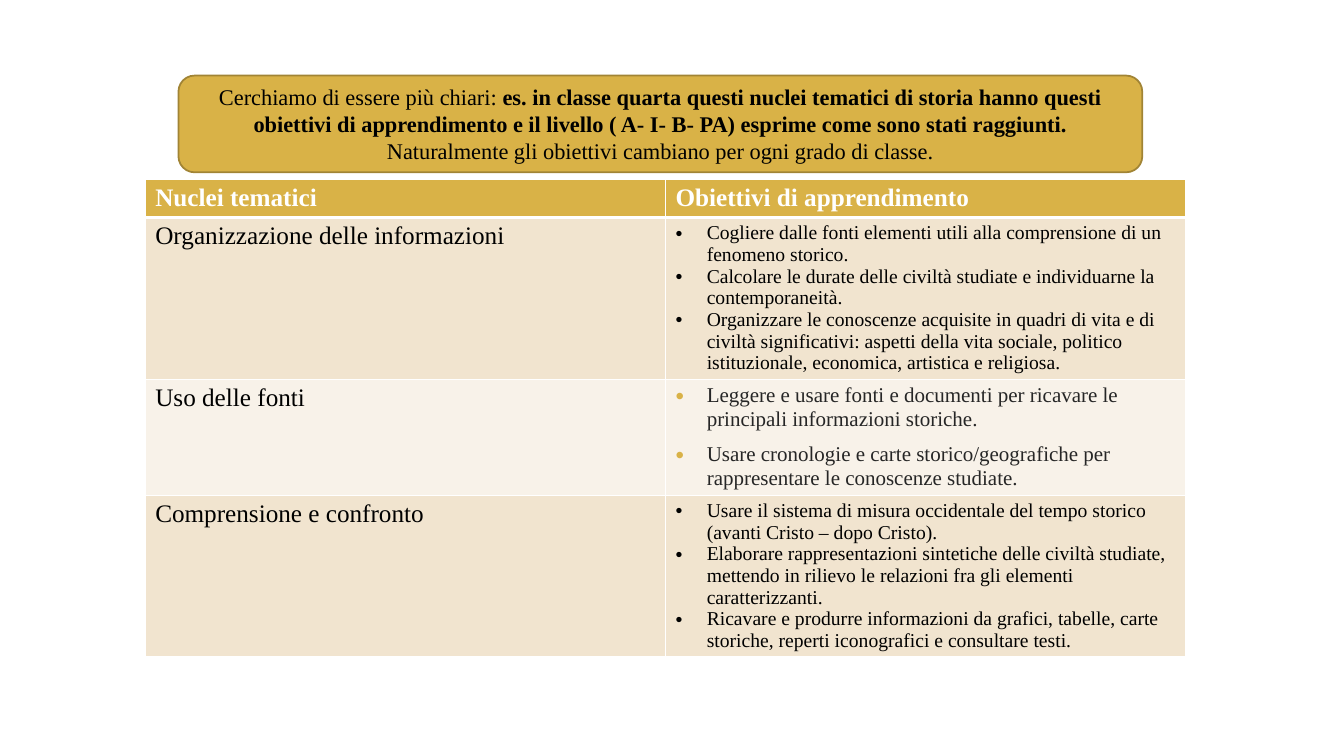
"""Build a slide with a table of history topics and their learning objectives."""
from lxml import etree
from pptx import Presentation
from pptx import util as u
from pptx.dml.color import RGBColor
from pptx.enum import shapes, text
from pptx.oxml.ns import qn

FONT = "Times New Roman"
COLORS = {
    "gold": "D9B247", "outline": "A18435", "sand": "F1E4CF", "cream": "F8F2E9",
    "white": "FFFFFF", "black": "000000", "gray": "262626",
}
BULLET_INDENT = u.Inches(0.31)


def add_text(paragraph, content, size=18, color="black", bold=False):
    run = paragraph.add_run()
    run.text = content
    run.font.name = FONT
    run.font.size = u.Pt(size)
    run.font.bold = bold
    run.font.color.rgb = RGBColor.from_string(COLORS[color])


def style_cell(cell, fill, bottom_width=1):
    cell.fill.solid()
    cell.fill.fore_color.rgb = RGBColor.from_string(COLORS[fill])
    properties = cell._tc.get_or_add_tcPr()
    for index, side in enumerate(("lnL", "lnR", "lnT", "lnB")):
        width = bottom_width if side == "lnB" else 1
        line = etree.Element(qn(f"a:{side}"), w=str(u.Pt(width)))
        solid = etree.SubElement(line, qn("a:solidFill"))
        etree.SubElement(solid, qn("a:srgbClr"), val=COLORS["white"])
        properties.insert(index, line)


presentation = Presentation()
presentation.slide_width = u.Inches(13.33)
presentation.slide_height = u.Inches(7.5)
slide = presentation.slides.add_slide(presentation.slide_layouts[6])

headers = ["Nuclei tematici", "Obiettivi di apprendimento"]
topics = [
    ("Organizzazione delle informazioni", "sand", 1.6, [
        "Cogliere dalle fonti elementi utili alla comprensione di un fenomeno storico.",
        "Calcolare le durate delle civiltà studiate e individuarne la contemporaneità.",
        "Organizzare le conoscenze acquisite in quadri di vita e di civiltà significativi: "
        "aspetti della vita sociale, politico istituzionale, economica, artistica e religiosa.",
    ]),
    ("Uso delle fonti", "cream", 1.15, [
        "Leggere e usare fonti e documenti per ricavare le principali informazioni storiche.",
        "Usare cronologie e carte storico/geografiche per rappresentare le conoscenze studiate.",
    ]),
    ("Comprensione e confronto", "sand", 1.6, [
        "Usare il sistema di misura occidentale del tempo storico "
        "(avanti Cristo – dopo Cristo).",
        "Elaborare rappresentazioni sintetiche delle civiltà studiate, mettendo in rilievo "
        "le relazioni fra gli elementi caratterizzanti.",
        "Ricavare e produrre informazioni da grafici, tabelle, carte storiche, "
        "reperti iconografici e consultare testi.",
    ]),
]

table = slide.shapes.add_table(
    len(topics) + 1, len(headers),
    u.Inches(1.44), u.Inches(1.78), u.Inches(10.32), u.Inches(4.72)).table
table.rows[0].height = u.Inches(0.37)
for column, header in enumerate(headers):
    cell = table.cell(0, column)
    style_cell(cell, "gold", bottom_width=3)
    add_text(cell.text_frame.paragraphs[0], header, color="white", bold=True)

for row, (topic, fill, height, objectives) in enumerate(topics, start=1):
    table.rows[row].height = u.Inches(height)
    topic_cell, objectives_cell = table.cell(row, 0), table.cell(row, 1)
    style_cell(topic_cell, fill)
    style_cell(objectives_cell, fill)
    add_text(topic_cell.text_frame.paragraphs[0], topic)
    spaced = fill == "cream"
    frame = objectives_cell.text_frame
    for index, objective in enumerate(objectives):
        paragraph = frame.add_paragraph() if index else frame.paragraphs[0]
        properties = paragraph._p.get_or_add_pPr()
        properties.set("marL", str(BULLET_INDENT))
        properties.set("indent", str(-BULLET_INDENT))
        if spaced:
            bullet_color = etree.SubElement(properties, qn("a:buClr"))
            etree.SubElement(bullet_color, qn("a:srgbClr"), val=COLORS["gold"])
            etree.SubElement(properties, qn("a:buSzPct"), val="115000")
        etree.SubElement(properties, qn("a:buFont"), typeface="Arial")
        etree.SubElement(properties, qn("a:buChar"), char="•")
        if spaced:
            paragraph.space_after = u.Pt(6)
            if index:
                paragraph.space_before = u.Pt(3)
        add_text(paragraph, objective, size=15 if spaced else 14,
                 color="gray" if spaced else "black")

banner = slide.shapes.add_shape(
    shapes.MSO_SHAPE.ROUNDED_RECTANGLE,
    u.Inches(1.77), u.Inches(0.75), u.Inches(9.56), u.Inches(0.96))
banner.shadow.inherit = False
banner.fill.solid()
banner.fill.fore_color.rgb = RGBColor.from_string(COLORS["gold"])
banner.line.color.rgb = RGBColor.from_string(COLORS["outline"])
banner.line.width = u.Pt(1.25)
banner.text_frame.word_wrap = True
banner.text_frame.vertical_anchor = text.MSO_ANCHOR.MIDDLE
paragraph = banner.text_frame.paragraphs[0]
paragraph.alignment = text.PP_ALIGN.CENTER
add_text(paragraph, "Cerchiamo di essere più chiari: ", size=16)
add_text(paragraph, "es. in classe quarta questi nuclei tematici di storia hanno questi "
         "obiettivi di apprendimento e il livello ( A- I- B- PA) esprime come sono stati "
         "raggiunti. ", size=16, bold=True)
add_text(paragraph, "Naturalmente gli obiettivi cambiano per ogni grado di classe.", size=16)

presentation.save("out.pptx")
